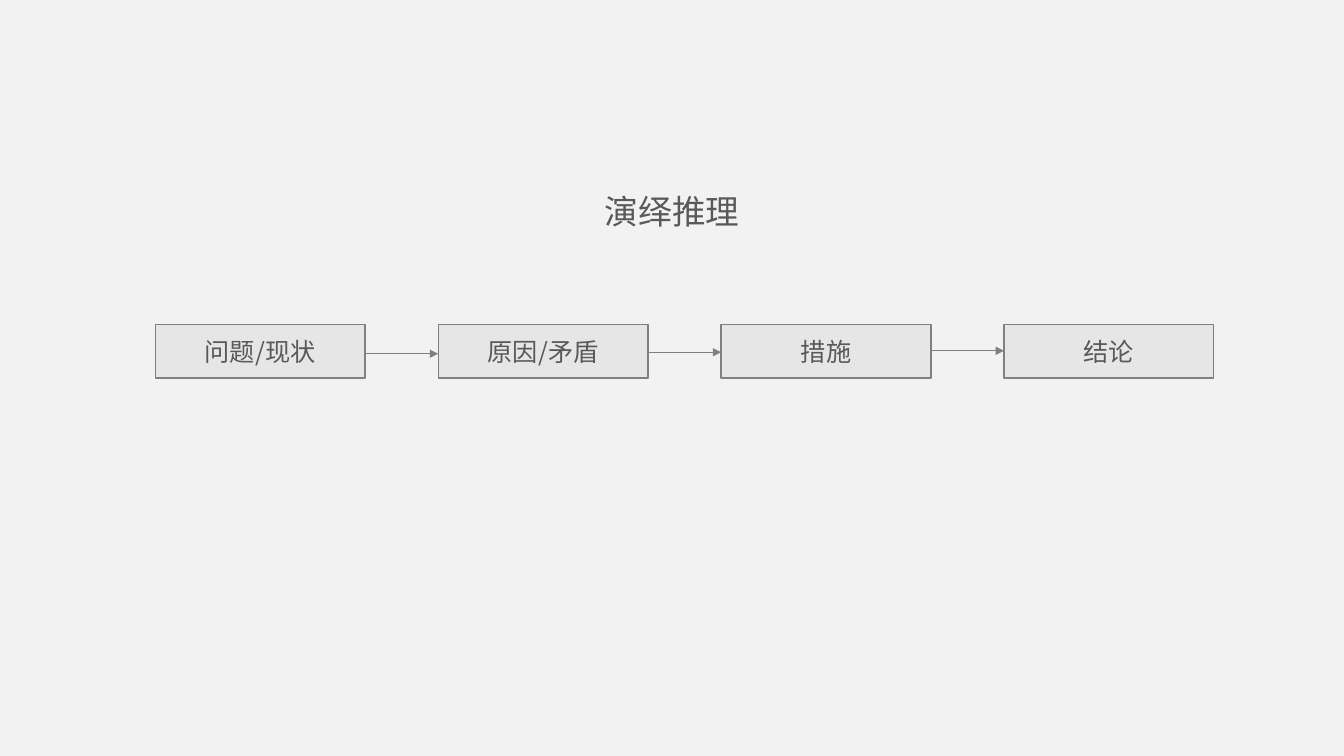
from lxml import etree
from pptx import Presentation
from pptx import util as u
from pptx.dml.color import RGBColor
from pptx.enum import shapes, text
from pptx.oxml import ns

COLORS = {"background": "F2F2F2", "box": "E7E6E6", "line": "808080", "text": "595959"}
FONT = "Noto Sans CJK SC"
STEPS = ["问题/现状", "原因/矛盾", "措施", "结论"]
LEFT, TOP, WIDTH, HEIGHT, PITCH = 110.9, 231.8, 149.8, 38.2, 202.1
ARROW_TOP, ARROW_RISE = 252.7, 1.05


def apply(target, formats):
    for name, value in formats.items():
        setattr(target, name, value)


class Diagram:
    def __init__(self, page):
        self.page = page
        self.paint(page.background.fill, "background")

    def paint(self, fill, color):
        fill.solid()
        fill.fore_color.rgb = RGBColor.from_string(COLORS[color])

    def outline(self, item, width):
        item.line.width = u.Pt(width)
        self.paint(item.line.fill, "line")

    def label(self, frame, words, size, anchor):
        apply(frame, {"word_wrap": True, "vertical_anchor": anchor})
        para = frame.paragraphs[0]
        para.alignment = text.PP_ALIGN.CENTER
        span = para.add_run()
        span.text = words
        apply(span.font, {"size": u.Pt(size), "name": FONT})
        self.paint(span.font.fill, "text")
        etree.SubElement(span.font._element, ns.qn("a:ea"), typeface=FONT)

    def title(self, words, *bounds):
        box = self.page.shapes.add_textbox(*map(u.Pt, bounds))
        self.label(box.text_frame, words, 24, text.MSO_ANCHOR.TOP)
        box.text_frame.auto_size = text.MSO_AUTO_SIZE.SHAPE_TO_FIT_TEXT

    def step(self, words, *bounds):
        box = self.page.shapes.add_shape(
            shapes.MSO_SHAPE.RECTANGLE, *map(u.Pt, bounds))
        box.shadow.inherit = False
        self.paint(box.fill, "box")
        self.outline(box, 1)
        self.label(box.text_frame, words, 18, text.MSO_ANCHOR.MIDDLE)

    def arrow(self, *ends):
        line = self.page.shapes.add_connector(
            shapes.MSO_CONNECTOR.STRAIGHT, *map(u.Pt, ends))
        self.outline(line, 0.5)
        properties = line._element.spPr
        etree.SubElement(properties.find(ns.qn("a:ln")), ns.qn("a:tailEnd"), type="triangle")
        etree.SubElement(properties, ns.qn("a:effectLst"))


def main():
    deck = Presentation()
    apply(deck, {"slide_width": u.Pt(960), "slide_height": u.Pt(540)})
    diagram = Diagram(deck.slides.add_slide(deck.slide_layouts[6]))
    for index, words in enumerate(STEPS):
        diagram.step(words, LEFT + index * PITCH, TOP, WIDTH, HEIGHT)
    for index in range(len(STEPS) - 1):
        start = LEFT + index * PITCH + WIDTH
        level = ARROW_TOP - index * ARROW_RISE
        diagram.arrow(start, level, start + PITCH - WIDTH, level)
    diagram.title("演绎推理", 338.2, 132.5, 283.7, 36)
    deck.save("out.pptx")


if __name__ == "__main__":
    main()
